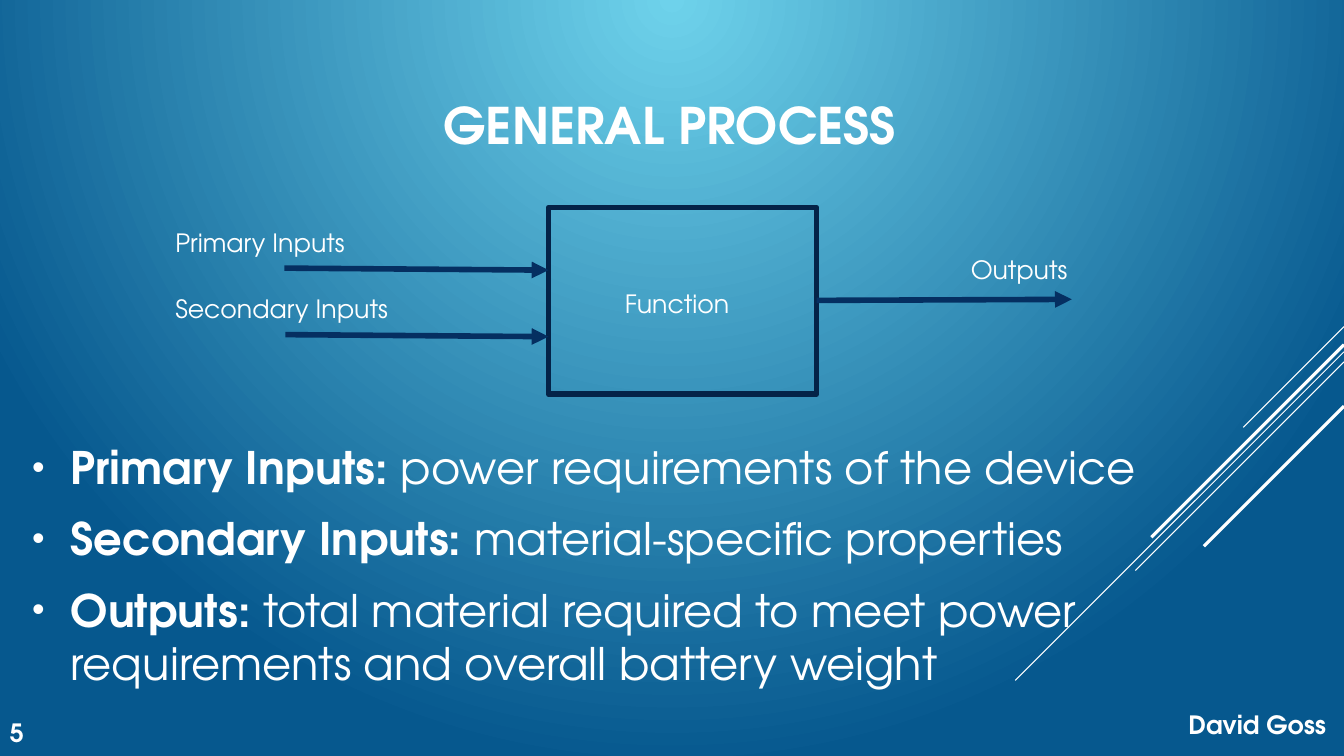
"""Build the General Process slide: a function box with its inputs and outputs."""
from pptx import Presentation
from pptx.dml.color import RGBColor
from pptx.enum.shapes import MSO_CONNECTOR, MSO_SHAPE
from pptx.enum.text import MSO_ANCHOR, MSO_AUTO_SIZE, PP_ALIGN
from pptx.oxml import parse_xml
from pptx.oxml.ns import nsdecls, qn
from pptx.util import Inches, Pt

FONT = "TeX Gyre Adventor"
WHITE = "FFFFFF"
NAVY = "052F61"


def write(shape, box, paragraphs, size, bold=False, align=PP_ALIGN.LEFT, anchor=MSO_ANCHOR.TOP):
    shape.left, shape.top, shape.width, shape.height = [Inches(length) for length in box]
    frame = shape.text_frame
    frame.word_wrap = True
    frame.auto_size = MSO_AUTO_SIZE.NONE
    frame.vertical_anchor = anchor
    for index, runs in enumerate(paragraphs):
        paragraph = frame.add_paragraph() if index else frame.paragraphs[0]
        paragraph.alignment = align
        for position, text in enumerate(runs):
            run = paragraph.add_run()
            run.text = text
            run.font.name = FONT
            run.font.size = Pt(size)
            run.font.bold = bold and position == 0
            run.font.color.rgb = RGBColor.from_string(WHITE)
    return frame


def add_line(start, end, color, width, arrow=False):
    points = [Inches(value) for value in (*start, *end)]
    line = slide.shapes.add_connector(MSO_CONNECTOR.STRAIGHT, *points)
    line.line.color.rgb = RGBColor.from_string(color)
    line.line.width = Pt(width)
    if arrow:
        outline = line.line._get_or_add_ln()
        outline.append(parse_xml(f'<a:tailEnd {nsdecls("a")} type="triangle"/>'))
    line._element.spPr.append(parse_xml(f'<a:effectLst {nsdecls("a")}/>'))


presentation = Presentation()
presentation.slide_width = Inches(13.33)
presentation.slide_height = Inches(7.5)
slide = presentation.slides.add_slide(presentation.slide_layouts[5])

background = slide.background.fill
background.gradient()
for stop, color in zip(background.gradient_stops, ("6ED2EB", "06588E")):
    stop.color.rgb = RGBColor.from_string(color)
gradient = slide._element.find(".//" + qn("a:gradFill"))
gradient.replace(
    gradient.find(qn("a:lin")),
    parse_xml(f'<a:path {nsdecls("a")} path="circle"><a:fillToRect b="100000"/></a:path>'),
)

for top, reach, width in ((3.24, 1, 0.75), (3.49, 3.26, 0.75), (3.59, 2.07, 0.75),
                          (3.42, 1.91, 2.25), (4.03, 1.39, 2.25)):
    add_line((13.33, top), (13.33 - reach, top + reach), WHITE, width)

write(slide.shapes.title, (1.98, 0.41, 9.33, 1.65), [["GENERAL PROCESS"]], 36, True,
      PP_ALIGN.CENTER, MSO_ANCHOR.MIDDLE)

function_box = slide.shapes.add_shape(
    MSO_SHAPE.RECTANGLE, Inches(5.44), Inches(2.06), Inches(2.66), Inches(1.85))
function_box.shadow.inherit = False
function_box.fill.background()
function_box.line.color.rgb = RGBColor.from_string("042348")
function_box.line.width = Pt(4)

for start, end in (((2.82, 2.66), (5.44, 2.68)),
                   ((2.83, 3.32), (5.44, 3.34)),
                   ((8.1, 2.98), (10.63, 2.97))):
    add_line(start, end, NAVY, 4, arrow=True)

for label, left, top, width in (("Primary Inputs", 1.64, 2.21, 2.19),
                                ("Secondary Inputs", 1.64, 2.86, 2.63),
                                ("Outputs", 9.53, 2.47, 2.19),
                                ("Function", 6.1, 2.81, 1.35)):
    write(slide.shapes.add_textbox(0, 0, 0, 0), (left, top, width, 0.4), [[label]], 18)

definitions = [
    ["Primary Inputs: ", "power requirements of the device"],
    ["Secondary Inputs: ", "material-specific properties"],
    ["Outputs: ", "total material required to meet power requirements and overall battery weight"],
]
body = write(slide.shapes.add_textbox(0, 0, 0, 0), (0.22, 4.44, 13.12, 2.33), definitions, 32,
             True, anchor=MSO_ANCHOR.MIDDLE)
for paragraph in body.paragraphs:
    paragraph.space_before = Pt(6.4)
    paragraph.space_after = Pt(6)
    properties = paragraph._p.get_or_add_pPr()
    properties.set("marL", str(Inches(0.38)))
    properties.set("indent", str(-Inches(0.38)))
    for bullet in (f'<a:buClr {nsdecls("a")}><a:srgbClr val="{WHITE}"/></a:buClr>',
                   f'<a:buSzPct {nsdecls("a")} val="80000"/>',
                   f'<a:buFont {nsdecls("a")} typeface="Arial"/>',
                   f'<a:buChar {nsdecls("a")} char="•"/>'):
        properties.append(parse_xml(bullet))

write(slide.shapes.add_textbox(0, 0, 0, 0), (10.96, 6.99, 2.29, 0.4), [["David Goss"]], 18, True,
      PP_ALIGN.RIGHT, MSO_ANCHOR.MIDDLE)
write(slide.shapes.add_textbox(0, 0, 0, 0), (0, 7.14, 0.75, 0.33), [["5"]], 18, True,
      anchor=MSO_ANCHOR.BOTTOM)

presentation.save("out.pptx")
